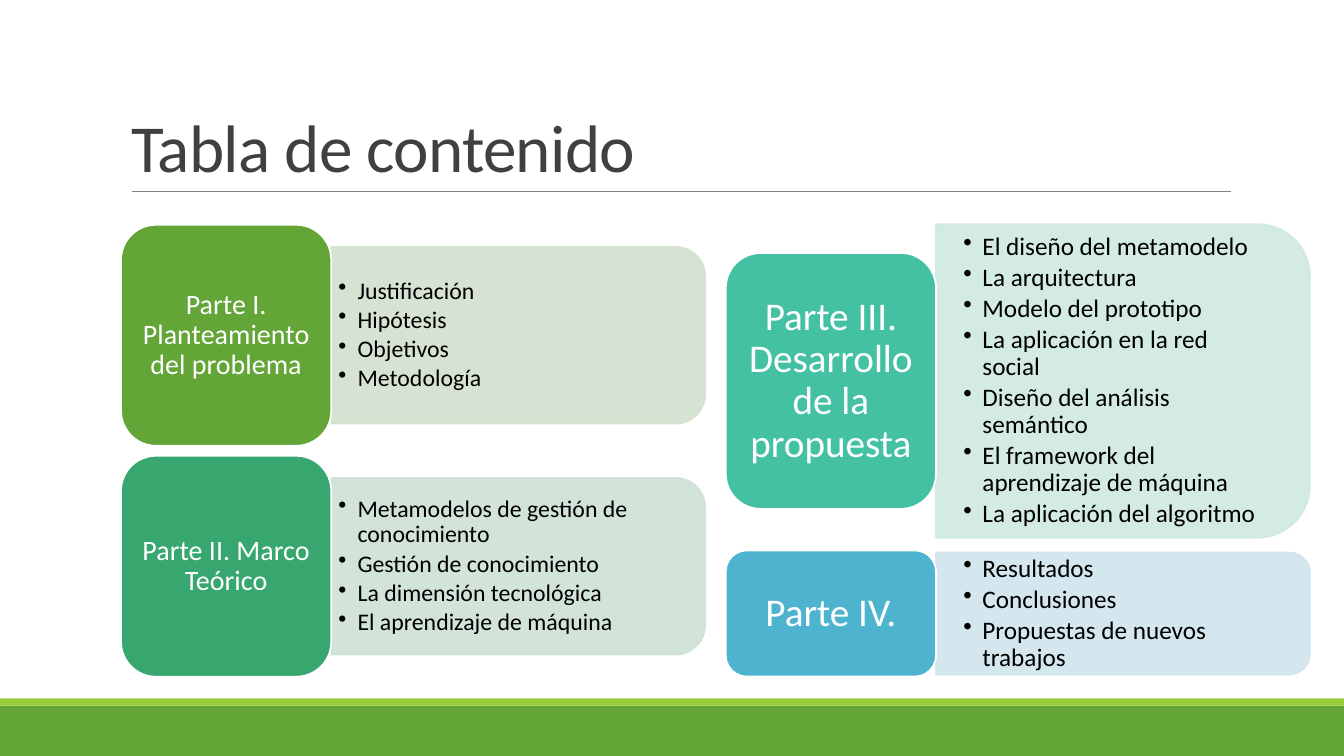
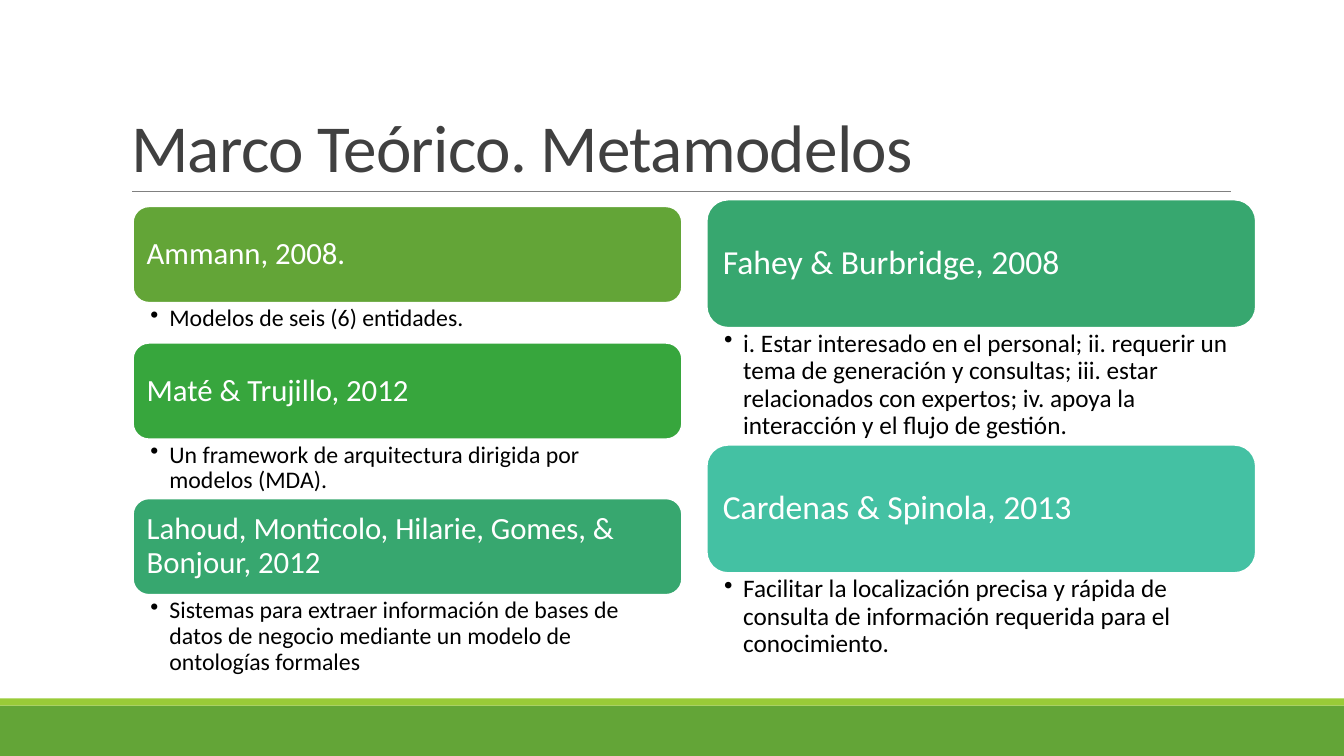
from lxml.etree import SubElement
from pptx import Presentation
from pptx.dml.color import RGBColor
from pptx.enum.shapes import MSO_CONNECTOR, MSO_SHAPE
from pptx.enum.text import MSO_ANCHOR, MSO_AUTO_SIZE, PP_ALIGN
from pptx.oxml.ns import qn
from pptx.util import Cm, Pt

FONT = "Calibri"
WHITE, BLACK, TITLE_GREY, RULE_GREY = "FFFFFF", "000000", "404040", "808080"
GREEN, LIME, LEAF, JADE = "63A537", "99CB38", "37A63D", "37A76F"
TEAL, BLUE = "44C1A3", "4EB3CF"
SLIDE_WIDTH, SLIDE_HEIGHT = 33.87, 19.05
CORNER = 1 / 6          # default corner radius, as a share of the short side
CORNER_INSET = 0.29     # share of the radius that text keeps clear of

# Contents, lengths in cm: each card has a label, its items, colours,
# the height of its middle line, and the heights of label and panel
LABEL_WIDTH, PANEL_WIDTH = 5.3, 9.42
CONTENTS_TITLE = "Tabla de contenido"
CONTENTS_COLUMNS = [
    {"left": 3.05, "label_size": 20, "item_size": 17,
     "label_insets": (0.2, 0.1), "item_insets": (0.18, 0.1),
     "cards": [
         ("Parte I. Planteamiento del problema",
          ["Justificación", "Hipótesis", "Objetivos", "Metodología"],
          GREEN, "D3E1CE", 8.45, 5.57, 4.45),
         ("Parte II. Marco Teórico",
          ["Metamodelos de gestión de conocimiento", "Gestión de conocimiento",
           "La dimensión tecnológica", "El aprendizaje de máquina"],
          JADE, "CEE1D5", 14.27, 5.57, 4.45)]},
    {"left": 18.29, "label_size": 28, "item_size": 18,
     "label_insets": (0.3, 0.15), "item_insets": (0.69, 0.35),
     "cards": [
         ("Parte III. Desarrollo de la propuesta",
          ["El diseño del metamodelo", "La arquitectura", "Modelo del prototipo",
           "La aplicación en la red social", "Diseño del análisis semántico",
           "El framework del aprendizaje de máquina", "La aplicación del algoritmo"],
          TEAL, "CFE9E0", 9.6, 6.45, 7.9),
         ("Parte IV.",
          ["Resultados", "Conclusiones", "Propuestas de nuevos trabajos"],
          BLUE, "D0E5ED", 15.46, 3.18, 3.07)]},
]

# Authors: each entry has a heading, a summary, a colour and the summary height
AUTHOR_WIDTH = 13.84
AUTHORS_TITLE = "Marco Teórico. Metamodelos"
AUTHOR_COLUMNS = [
    {"left": 3.35, "top": 5.2, "heading_height": 2.43, "heading_size": 22,
     "summary_size": 17, "heading_inset": 0.23, "right_inset": 0.44,
     "entries": [
         ("Ammann, 2008.", "Modelos de seis (6) entidades.", GREEN, 1.01),
         ("Maté & Trujillo, 2012",
          "Un framework de arquitectura dirigida por modelos (MDA).", LEAF, 1.49),
         ("Lahoud, Monticolo, Hilarie, Gomes, & Bonjour, 2012",
          "Sistemas para extraer información de bases de datos de negocio "
          "mediante un modelo de ontologías formales", JADE, 2.16)]},
    {"left": 17.81, "top": 5.03, "heading_height": 3.23, "heading_size": 24,
     "summary_size": 18, "heading_inset": 0.25, "right_inset": 0.36,
     "entries": [
         ("Fahey & Burbridge, 2008",
          "i. Estar interesado en el personal; ii. requerir un tema de generación "
          "y consultas; iii. estar relacionados con expertos; iv. apoya la "
          "interacción y el flujo de gestión.", JADE, 2.95),
         ("Cardenas & Spinola, 2013",
          "Facilitar la localización precisa y rápida de consulta de información "
          "requerida para el conocimiento.", TEAL, 2.84)]},
]


def color(value):
    return RGBColor.from_string(value)


def add_filled(slide, kind, box, fill, line=None):
    shape = slide.shapes.add_shape(kind, *(Cm(length) for length in box))
    shape.shadow.inherit = False
    shape.fill.solid()
    shape.fill.fore_color.rgb = color(fill)
    if line:
        shape.line.color.rgb = color(line)
        shape.line.width = Pt(1.25)
    else:
        shape.line.fill.background()
    return shape


def write(shape, texts, size, text_color, insets, after, anchor=MSO_ANCHOR.MIDDLE,
          align=PP_ALIGN.LEFT, bullets=False):
    """Insets are left, top, right, bottom; after is a share of the text size."""
    frame = shape.text_frame
    frame.word_wrap = True
    frame.vertical_anchor = anchor
    (frame.margin_left, frame.margin_top,
     frame.margin_right, frame.margin_bottom) = (Cm(inset) for inset in insets)
    frame.text = "\n".join(texts)
    for paragraph in frame.paragraphs:
        if bullets:
            properties = paragraph._p.get_or_add_pPr()
            properties.set("marL", str(Cm(0.48)))
            properties.set("indent", str(-Cm(0.48)))
            SubElement(properties, qn("a:buChar")).set("char", "•")
        paragraph.alignment = align
        paragraph.line_spacing = 0.9
        paragraph.space_after = Pt(size * after)
        for run in paragraph.runs:
            run.font.name = FONT
            run.font.size = Pt(size)
            run.font.color.rgb = color(text_color)


def add_bullets(slide, box, texts, size, insets, after, anchor):
    text_box = slide.shapes.add_textbox(*(Cm(length) for length in box))
    write(text_box, texts, size, BLACK, insets, after, anchor, bullets=True)


def add_title_slide(presentation, title_text):
    slide = presentation.slides.add_slide(presentation.slide_layouts[5])
    title = slide.shapes.title
    title.left, title.top, title.width, title.height = Cm(3.05), Cm(0.79), Cm(27.94), Cm(4.04)
    frame = title.text_frame
    frame.text = title_text
    frame.word_wrap = True
    frame.auto_size = MSO_AUTO_SIZE.NONE
    frame.vertical_anchor = MSO_ANCHOR.BOTTOM
    paragraph = frame.paragraphs[0]
    paragraph.alignment = PP_ALIGN.LEFT
    paragraph.line_spacing = 0.85
    font = paragraph.runs[0].font
    font.name, font.size = FONT, Pt(48)
    font.color.rgb = color(TITLE_GREY)
    paragraph.runs[0]._r.get_or_add_rPr().set("spc", "-50")

    # Bands at the foot and rule under the title
    for top, height, fill in ((17.78, 1.27, GREEN), (17.6, 0.18, LIME)):
        add_filled(slide, MSO_SHAPE.RECTANGLE, (0, top, SLIDE_WIDTH, height), fill)
    rule = slide.shapes.add_connector(
        MSO_CONNECTOR.STRAIGHT, Cm(3.33), Cm(4.83), Cm(31.01), Cm(4.83))
    rule.line.color.rgb = color(RULE_GREY)
    rule.line.width = Pt(0.5)
    SubElement(rule._element.spPr, qn("a:effectLst"))
    return slide


def add_panel(slide, left, middle, height, fill):
    # A quarter turn puts the rounded top corners on the right
    center = left + PANEL_WIDTH / 2
    box = (center - height / 2, middle - PANEL_WIDTH / 2, height, PANEL_WIDTH)
    panel = add_filled(slide, MSO_SHAPE.ROUND_2_SAME_RECTANGLE, box, fill, fill)
    panel.rotation = 90
    for color_element in panel._element.spPr.iter(qn("a:srgbClr")):
        SubElement(color_element, qn("a:alpha")).set("val", "90000")


def add_card(slide, column, card):
    label, items, label_fill, panel_fill, middle, label_height, panel_height = card
    panel_left = column["left"] + LABEL_WIDTH
    add_panel(slide, panel_left, middle, panel_height, panel_fill)
    clear = min(panel_height, PANEL_WIDTH) * CORNER * CORNER_INSET
    add_bullets(slide, (panel_left, middle - panel_height / 2 + clear,
                        PANEL_WIDTH - clear, panel_height - 2 * clear),
                items, column["item_size"], column["item_insets"] * 2,
                0.15, MSO_ANCHOR.MIDDLE)
    shape = add_filled(slide, MSO_SHAPE.ROUNDED_RECTANGLE,
                       (column["left"], middle - label_height / 2, LABEL_WIDTH, label_height),
                       label_fill, WHITE)
    write(shape, [label], column["label_size"], WHITE, column["label_insets"] * 2,
          0.35, align=PP_ALIGN.CENTER)


def add_author_column(slide, column):
    left, top, height = column["left"], column["top"], column["heading_height"]
    for heading, summary, fill, summary_height in column["entries"]:
        shape = add_filled(slide, MSO_SHAPE.ROUNDED_RECTANGLE,
                           (left, top, AUTHOR_WIDTH, height), fill, WHITE)
        write(shape, [heading], column["heading_size"], WHITE,
              (column["heading_inset"],) * 4, 0.35)
        top += height
        add_bullets(slide, (left, top, AUTHOR_WIDTH, summary_height), [summary],
                    column["summary_size"], (0.44, 0.08, column["right_inset"], 0.08),
                    0.2, MSO_ANCHOR.TOP)
        top += summary_height


def main():
    presentation = Presentation()
    presentation.slide_width, presentation.slide_height = Cm(SLIDE_WIDTH), Cm(SLIDE_HEIGHT)

    contents = add_title_slide(presentation, CONTENTS_TITLE)
    for column in CONTENTS_COLUMNS:
        for card in column["cards"]:
            add_card(contents, column, card)

    authors = add_title_slide(presentation, AUTHORS_TITLE)
    for column in AUTHOR_COLUMNS:
        add_author_column(authors, column)

    presentation.save("out.pptx")


if __name__ == "__main__":
    main()
